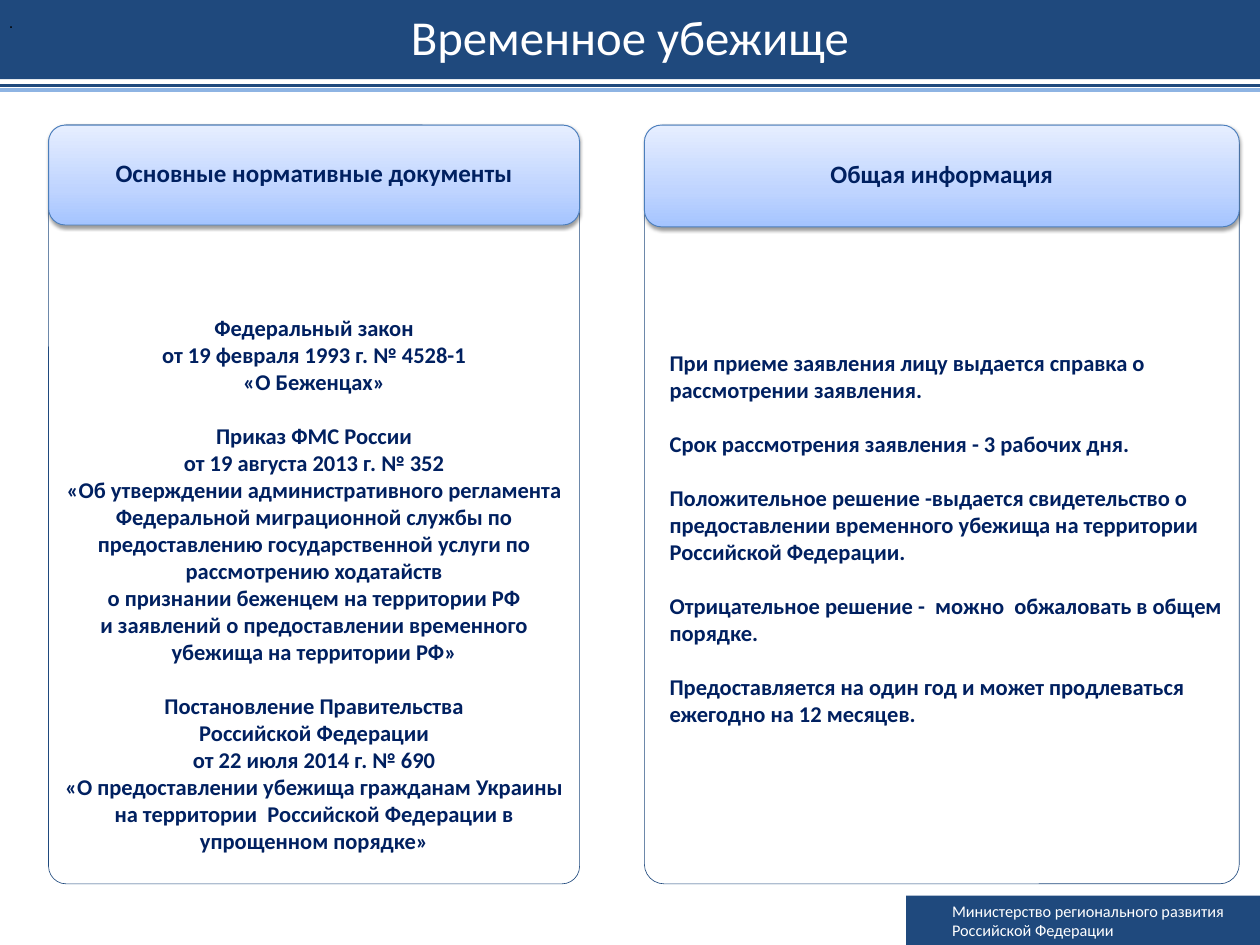
from copy import deepcopy

from lxml import etree
from pptx import Presentation
from pptx.dml.color import RGBColor
from pptx.enum import shapes, text
from pptx.oxml import ns
from pptx.util import Pt

NAVY, INK, WHITE = "1F497D", "002060", "FFFFFF"
CENTER, LEFT = text.PP_ALIGN.CENTER, text.PP_ALIGN.LEFT
MIDDLE = text.MSO_ANCHOR.MIDDLE


def rgb(value):
    return RGBColor.from_string(value)


def write(shape, groups, size=18, color=INK, bold=False, font="Calibri", align=LEFT,
          anchor=MIDDLE, insets=(7.2, 3.6, 7.2, 3.6), spacing=1.0, gap=0, wrap=True):
    """Fill a shape with groups of paragraphs, with a gap before each later group."""
    frame = shape.text_frame
    frame.auto_size = text.MSO_AUTO_SIZE.NONE
    frame.word_wrap = wrap
    frame.vertical_anchor = anchor
    frame.margin_left, frame.margin_top, frame.margin_right, frame.margin_bottom = map(Pt, insets)
    lines = [(line, gap if g and not i else 0)
             for g, group in enumerate(groups) for i, line in enumerate(group)]
    for number, (line, before) in enumerate(lines):
        paragraph = frame.add_paragraph() if number else frame.paragraphs[0]
        paragraph.text = line
        properties = paragraph._p.get_or_add_pPr()
        properties.set("marL", "0")
        properties.set("indent", "0")
        etree.SubElement(properties, ns.qn("a:buNone"))
        paragraph.alignment = align
        paragraph.line_spacing = spacing
        paragraph.space_before = Pt(before)
        paragraph.space_after = Pt(0)
        for run in paragraph.runs:
            run.font.name, run.font.size, run.font.bold = font, Pt(size), bold
            run.font.color.rgb = rgb(color)


prs = Presentation()
prs.slide_width, prs.slide_height = Pt(1008), Pt(756)
slide = prs.slides.add_slide(prs.slide_layouts[3])
title, documents, information = slide.placeholders

# Title band
title.left, title.top, title.width, title.height = Pt(0), Pt(0), Pt(1008), Pt(63.4)
title.fill.solid()
title.fill.fore_color.rgb = rgb(NAVY)
write(title, [["Временное убежище"]], size=39, color=WHITE, align=CENTER,
      insets=(10, 5, 10, 5), spacing=Pt(40.6))

# Double rule below the title
for y, color in ((68.4, NAVY), (72, "8EB4E3")):
    rule = slide.shapes.add_connector(shapes.MSO_CONNECTOR.STRAIGHT, Pt(0), Pt(y), Pt(1008), Pt(y))
    rule.line.color.rgb = rgb(color)
    rule.line.width = Pt(3)
    etree.SubElement(rule._element.spPr, ns.qn("a:effectLst"))

# Two panels with gradient headings
PANEL_TOP = 100.1
for heading, left, width, height in (("Основные нормативные документы", 38.9, 424.8, 79.9),
                                     ("Общая информация", 515.5, 475.9, 81.4)):
    panel = slide.shapes.add_shape(shapes.MSO_SHAPE.ROUNDED_RECTANGLE,
                                   Pt(left), Pt(PANEL_TOP), Pt(width), Pt(607))
    panel.adjustments[0] = 0.033
    panel.shadow.inherit = False
    panel.fill.background()
    panel.line.color.rgb = rgb(NAVY)
    panel.line.width = Pt(0.5)

    header = slide.shapes.add_shape(shapes.MSO_SHAPE.ROUNDED_RECTANGLE,
                                    Pt(left), Pt(PANEL_TOP), Pt(width), Pt(height))
    header.line.color.rgb = rgb("4B7EBC")
    header.line.width = Pt(0.75)
    header.fill.gradient()
    header.fill.gradient_angle = 90
    first_stop = header._element.spPr.find(".//" + ns.qn("a:gs"))
    first_stop.addnext(deepcopy(first_stop))
    for stop, (position, color) in zip(header.fill.gradient_stops,
                                       ((0, "A4C4FF"), (0.35, "BFD4FF"), (1, "E6EEFF"))):
        stop.position = position
        stop.color.rgb = rgb(color)
    header.shadow.inherit = False
    shadow = etree.SubElement(header._element.spPr.find(ns.qn("a:effectLst")),
                              ns.qn("a:outerShdw"), blurRad=str(Pt(3.1)), dist=str(Pt(1.6)),
                              dir="5400000", rotWithShape="0")
    shade = etree.SubElement(shadow, ns.qn("a:srgbClr"), val="000000")
    etree.SubElement(shade, ns.qn("a:alpha"), val="38000")
    write(header, [[heading]], size=20, bold=True, align=CENTER,
          insets=(0, 3.6, 0, 3.6), spacing=Pt(19.5))

# Regulations, in the left panel
documents.left, documents.top, documents.width, documents.height = Pt(38.9), Pt(200), Pt(424.8), Pt(486.5)
write(documents, [
    ["Федеральный закон", "от 19 февраля 1993 г. № 4528-1", "«О Беженцах»"],
    ["Приказ ФМС России", "от 19 августа 2013 г. № 352",
     "«Об утверждении административного регламента Федеральной миграционной службы по "
     "предоставлению государственной услуги по рассмотрению ходатайств\v"
     "о признании беженцем на территории РФ",
     "и заявлений о предоставлении временного убежища на территории РФ»"],
    ["Постановление Правительства", "Российской Федерации", "от 22 июля 2014 г. № 690",
     "«О предоставлении убежища гражданам Украины на территории  Российской Федерации в "
     "упрощенном порядке»"],
], bold=True, align=CENTER, anchor=text.MSO_ANCHOR.BOTTOM, insets=(11.3, 3.6, 11.3, 3.6), gap=21.6)

# General information, in the right panel
information.left, information.top, information.width, information.height = (
    Pt(528.5), Pt(275.8), Pt(468.7), Pt(334))
write(information, [
    ["При приеме заявления лицу выдается справка о рассмотрении заявления."],
    ["Срок рассмотрения заявления - 3 рабочих дня."],
    ["Положительное решение -выдается свидетельство о предоставлении временного убежища "
     "на территории Российской Федерации."],
    ["Отрицательное решение -  можно  обжаловать в общем порядке."],
    ["Предоставляется на один год и может продлеваться ежегодно на 12 месяцев."],
], bold=True, anchor=text.MSO_ANCHOR.TOP, gap=21.6)

# Ministry label at the bottom right
ministry = slide.shapes.add_shape(shapes.MSO_SHAPE.RECTANGLE, Pt(725), Pt(716.4), Pt(283), Pt(39.6))
ministry.shadow.inherit = False
ministry.fill.solid()
ministry.fill.fore_color.rgb = rgb(NAVY)
ministry.line.fill.background()
write(ministry, [["Министерство регионального развития\vРоссийской Федерации"]],
      size=13, color=WHITE, insets=(36.7, 3.6, 7.2, 3.6))

# Small dot in the title band
dot = slide.shapes.add_textbox(Pt(0), Pt(6.5), Pt(18), Pt(23))
write(dot, [["."]], size=13, color="000000", font="Arial", wrap=False)

prs.save("out.pptx")
